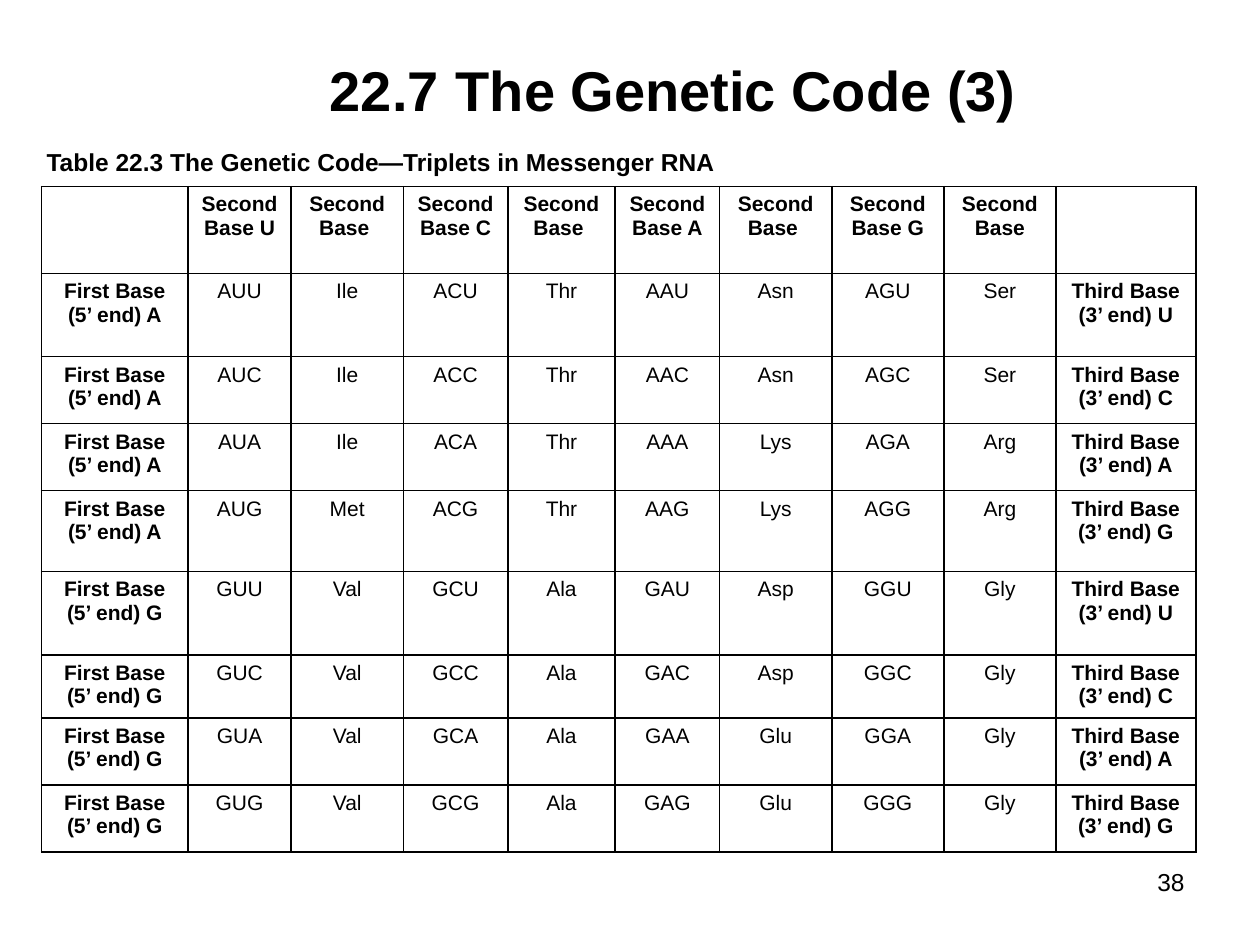
from dataclasses import dataclass
from itertools import product

from lxml.etree import SubElement
from pptx import Presentation
from pptx.dml.color import RGBColor
from pptx.enum.text import MSO_ANCHOR, PP_ALIGN
from pptx.oxml.ns import qn
from pptx.util import Cm, Pt

BLACK = "000000"
WHITE = "FFFFFF"
COLUMN_WIDTHS = [2.95, 2.08, 2.26, 2.11, 2.16, 2.11, 2.26, 2.26, 2.26, 2.82]
ROW_HEIGHTS = [1.75, 1.68, 1.35, 1.35, 1.63, 1.68, 1.21, 1.35, 1.35]
SECOND_BASES = "UCAG"
THIRD_BASES = "UCAG"
HEADINGS = ["", "Second Base U", "Second Base ", "Second Base C", "Second Base ",
            "Second Base A", "Second Base ", "Second Base G", "Second Base", ""]


@dataclass
class CodonRow:
    first: str
    third: str
    amino_acids: list[str]

    def cells(self) -> list[str]:
        pairs = [
            entry
            for second, amino_acid in zip(SECOND_BASES, self.amino_acids)
            for entry in (self.first + second + self.third, amino_acid)
        ]
        return [f"First Base\n(5’ end) {self.first}", *pairs,
                f"Third Base\n(3’ end) {self.third}"]


AMINO_ACIDS = [
    "Ile Thr Asn Ser", "Ile Thr Asn Ser", "Ile Thr Lys Arg", "Met Thr Lys Arg",
    "Val Ala Asp Gly", "Val Ala Asp Gly", "Val Ala Glu Gly", "Val Ala Glu Gly",
]
CODON_ROWS = [
    CodonRow(first, third, names.split())
    for (first, third), names in zip(product("AG", THIRD_BASES), AMINO_ACIDS)
]


def rgb(value: str) -> RGBColor:
    return RGBColor.from_string(value)


def write(frame, text: str, *, size: float, bold: bool = False,
          align=PP_ALIGN.LEFT, color: str = BLACK) -> None:
    for index, line in enumerate(text.split("\n")):
        paragraph = frame.paragraphs[0] if index == 0 else frame.add_paragraph()
        paragraph.alignment = align
        run = paragraph.add_run()
        run.text = line
        run.font.name = "Arial"
        run.font.size = Pt(size)
        run.font.bold = bold
        run.font.color.rgb = rgb(color)


def add_label(slide, text: str, left: float, top: float, width: float,
              height: float, **style) -> None:
    box = slide.shapes.add_textbox(Cm(left), Cm(top), Cm(width), Cm(height))
    box.text_frame.word_wrap = True
    write(box.text_frame, text, **style)


def outline(cell, color: str = BLACK, width: float = 1) -> None:
    properties = cell._tc.get_or_add_tcPr()
    for side in ("a:lnL", "a:lnR", "a:lnT", "a:lnB"):
        border = SubElement(properties, qn(side), w=str(Pt(width)))
        fill = SubElement(border, qn("a:solidFill"))
        SubElement(fill, qn("a:srgbClr"), val=color)


def add_title(slide, text: str) -> None:
    title = slide.shapes.title
    title.left, title.top, title.width, title.height = Cm(6), Cm(1.07), Cm(15.14), Cm(1.47)
    title.text_frame.vertical_anchor = MSO_ANCHOR.MIDDLE
    write(title.text_frame, text, size=32, bold=True, align=PP_ALIGN.CENTER)


def add_codon_table(slide, left: float, top: float) -> None:
    contents = [HEADINGS] + [row.cells() for row in CODON_ROWS]
    table = slide.shapes.add_table(
        len(ROW_HEIGHTS), len(COLUMN_WIDTHS), Cm(left), Cm(top),
        Cm(sum(COLUMN_WIDTHS)), Cm(sum(ROW_HEIGHTS)),
    ).table
    table.first_row = False
    table.horz_banding = False
    for column, width in zip(table.columns, COLUMN_WIDTHS):
        column.width = Cm(width)
    for row, height in zip(table.rows, ROW_HEIGHTS):
        row.height = Cm(height)
    last = len(COLUMN_WIDTHS) - 1
    for row_index, texts in enumerate(contents):
        for column_index, text in enumerate(texts):
            cell = table.cell(row_index, column_index)
            outline(cell)
            cell.fill.solid()
            cell.fill.fore_color.rgb = rgb(WHITE)
            if text:
                write(cell.text_frame, text, size=12, align=PP_ALIGN.CENTER,
                      bold=row_index == 0 or column_index in (0, last))


def main() -> None:
    presentation = Presentation()
    presentation.slide_width = Cm(25.4)
    presentation.slide_height = Cm(19.05)
    slide = presentation.slides.add_slide(presentation.slide_layouts[5])
    add_label(slide, "38", 19.05, 17.35, 5.08, 0.86, size=14, align=PP_ALIGN.RIGHT)
    add_title(slide, "22.7\tThe Genetic Code (3)")
    add_label(slide, "Table 22.3 The Genetic Code—Triplets in Messenger RNA",
              0.69, 2.84, 14.2, 0.79, size=14, bold=True)
    add_codon_table(slide, 0.84, 3.76)
    presentation.save("out.pptx")


if __name__ == "__main__":
    main()
